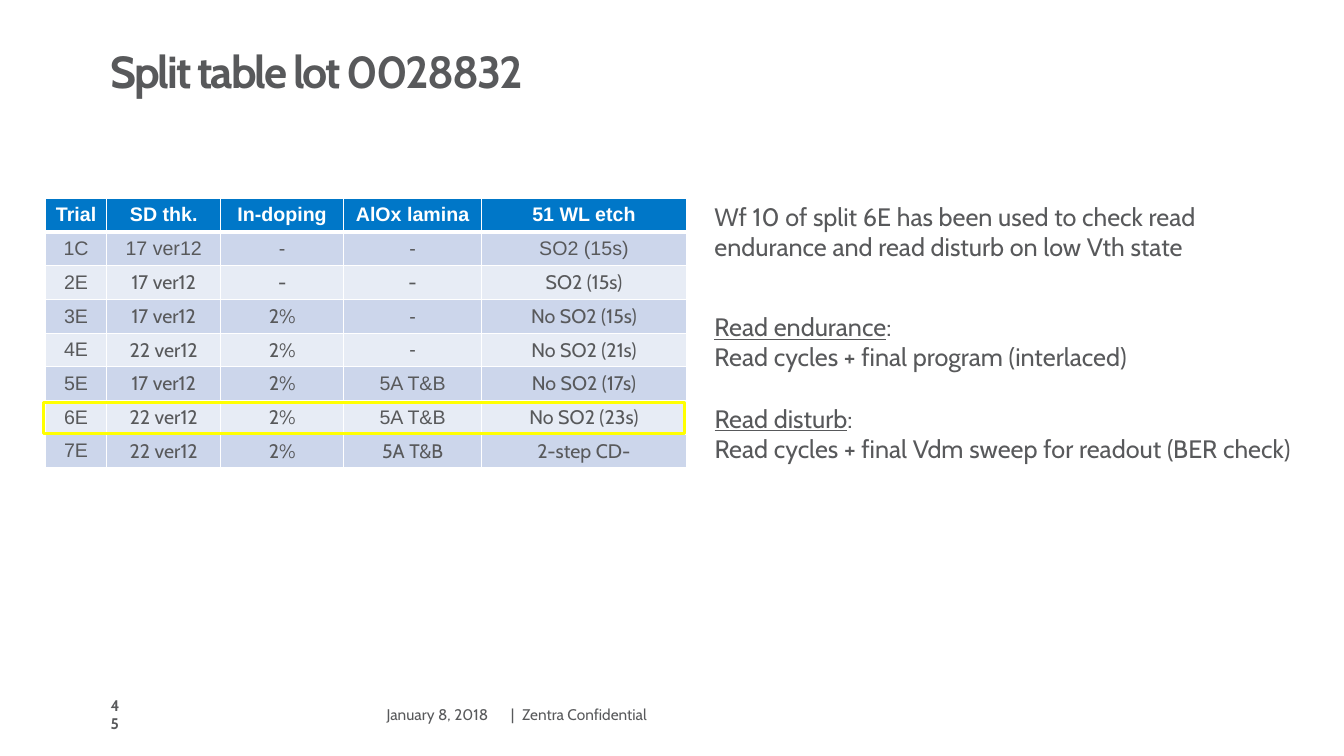
from dataclasses import dataclass

import lxml.etree
import pptx
import pptx.dml.color
import pptx.enum.shapes
import pptx.enum.text
import pptx.oxml.ns
import pptx.util

Pt = pptx.util.Pt
Align = pptx.enum.text.PP_ALIGN
Anchor = pptx.enum.text.MSO_ANCHOR
qn = pptx.oxml.ns.qn


@dataclass(frozen=True)
class Theme:
    ink: str = "58595B"
    white: str = "FFFFFF"
    header: str = "0077C8"
    bands: tuple[str, str] = ("CCD6EB", "E7ECF5")
    highlight: str = "FFFF00"
    body_font: str = "Cabin"
    table_font: str = "Arial"
    title_size: float = 32
    note_size: float = 18
    table_size: float = 14
    footer_size: float = 11


THEME = Theme()


@dataclass(frozen=True)
class Line:
    text: str
    underlined: str = ""  # leading words that carry an underline


@dataclass(frozen=True)
class Block:
    left: float
    top: float
    width: float
    height: float
    lines: tuple[Line, ...]
    size: float
    bold: bool = False
    wrap: bool = True
    inset: bool = True
    anchor: Anchor = Anchor.TOP
    align: Align = Align.LEFT
    tab: float = 0
    line_spacing: float = 1
    tracking: float = 0


@dataclass(frozen=True)
class Trial:
    values: tuple[str, ...]
    arial_columns: tuple[int, ...] = (0, 3)


TITLE = Block(72, 0, 817.2, 73.4, (Line("Split table lot 0028832"),), THEME.title_size,
              bold=True, anchor=Anchor.BOTTOM, line_spacing=0.9, tracking=-1.5)

FOOTER_TOP, FOOTER_HEIGHT = 501.1, 18
FOOTERS = (
    Block(72, FOOTER_TOP, 21.6, FOOTER_HEIGHT, (Line("45"),), THEME.footer_size,
          bold=True, anchor=Anchor.MIDDLE),
    Block(259.2, FOOTER_TOP, 106.6, FOOTER_HEIGHT, (Line("January 8, 2018"),),
          THEME.footer_size, inset=False, anchor=Anchor.MIDDLE, align=Align.CENTER),
    Block(365, FOOTER_TOP, 110.2, FOOTER_HEIGHT, (Line("|\tZentra Confidential"),),
          THEME.footer_size, inset=False, anchor=Anchor.MIDDLE, tab=8),
)

NOTES_LEFT, NOTE_HEIGHT = 503.3, 51
NOTES = (
    Block(NOTES_LEFT, 140.4, 422.6, NOTE_HEIGHT,
          (Line("Wf 10 of split 6E has been used to check read endurance "
                "and read disturb on low Vth state"),), THEME.note_size),
    Block(NOTES_LEFT, 218.9, 331.2, NOTE_HEIGHT,
          (Line(":", underlined="Read endurance"),
           Line("Read cycles + final program (interlaced)")), THEME.note_size, wrap=False),
    Block(NOTES_LEFT, 284.4, 461.5, NOTE_HEIGHT,
          (Line(":", underlined="Read disturb"),
           Line("Read cycles + final Vdm sweep for readout (BER check)")),
          THEME.note_size, wrap=False),
)

TABLE_LEFT, TABLE_TOP, ROW_HEIGHT = 32.4, 141.8, 24
COLUMN_WIDTHS = (43.9, 81.4, 87.8, 98.6, 146.2)
HEADINGS = ("Trial", "SD thk.", "In-doping", "AlOx lamina", "51 WL etch")
TRIALS = (
    Trial(("1C", "17 ver12", "-", "-", "SO2 (15s)"), (0, 1, 2, 3, 4)),
    Trial(("2E", "17 ver12", "-", "-", "SO2 (15s)"), (0,)),
    Trial(("3E", "17 ver12", "2%", "-", "No SO2 (15s)")),
    Trial(("4E", "22 ver12", "2%", "-", "No SO2 (21s)")),
    Trial(("5E", "17 ver12", "2%", "5A T&B", "No SO2 (17s)")),
    Trial(("6E", "22 ver12", "2%", "5A T&B", "No SO2 (23s)")),
    Trial(("7E", "22 ver12", "2%", "5A T&B", "2-step CD-"), (0,)),
)


def rgb(value: str) -> pptx.dml.color.RGBColor:
    return pptx.dml.color.RGBColor.from_string(value)


def style(paragraph, font: str, size: float, color: str, bold: bool) -> None:
    paragraph.font.name = font
    paragraph.font.size = Pt(size)
    paragraph.font.bold = bold
    paragraph.font.color.rgb = rgb(color)


def add_block(slide, block: Block) -> None:
    box = slide.shapes.add_textbox(Pt(block.left), Pt(block.top),
                                   Pt(block.width), Pt(block.height))
    frame = box.text_frame
    frame.word_wrap = block.wrap
    frame.vertical_anchor = block.anchor
    if not block.inset:
        frame.margin_left = frame.margin_right = Pt(0)
        frame.margin_top = frame.margin_bottom = Pt(0)
    for index, line in enumerate(block.lines):
        paragraph = frame.add_paragraph() if index else frame.paragraphs[0]
        paragraph.alignment = block.align
        paragraph.line_spacing = block.line_spacing
        if block.tab:
            stops = lxml.etree.SubElement(paragraph._p.get_or_add_pPr(), qn("a:tabLst"))
            lxml.etree.SubElement(stops, qn("a:tab"), pos=str(Pt(block.tab)), algn="l")
        style(paragraph, THEME.body_font, block.size, THEME.ink, block.bold)
        if line.underlined:
            lead = paragraph.add_run()
            lead.text = line.underlined
            lead.font.underline = True
        rest = paragraph.add_run()
        rest.text = line.text
        if block.tracking:
            rest._r.get_or_add_rPr().set("spc", str(int(block.tracking * 100)))


def set_borders(cell, top: float, bottom: float) -> None:
    properties = cell._tc.get_or_add_tcPr()
    sides = (("a:lnL", 1), ("a:lnR", 1), ("a:lnT", top), ("a:lnB", bottom))
    for position, (side, width) in enumerate(sides):
        edge = lxml.etree.Element(qn(side), w=str(Pt(width)))
        fill = lxml.etree.SubElement(edge, qn("a:solidFill"))
        lxml.etree.SubElement(fill, qn("a:srgbClr"), val=THEME.white)
        properties.insert(position, edge)


def fill_cell(cell, text: str, font: str, color: str, fill: str, bold: bool) -> None:
    cell.fill.solid()
    cell.fill.fore_color.rgb = rgb(fill)
    paragraph = cell.text_frame.paragraphs[0]
    paragraph.alignment = Align.CENTER
    style(paragraph, font, THEME.table_size, color, bold)
    paragraph.add_run().text = text


def add_split_table(slide) -> None:
    row_count = len(TRIALS) + 1
    split = slide.shapes.add_table(row_count, len(HEADINGS), Pt(TABLE_LEFT), Pt(TABLE_TOP),
                                   Pt(sum(COLUMN_WIDTHS)), Pt(ROW_HEIGHT * row_count)).table
    for column, width in zip(split.columns, COLUMN_WIDTHS):
        column.width = Pt(width)
    for row in split.rows:
        row.height = Pt(ROW_HEIGHT)
    for c, heading in enumerate(HEADINGS):
        cell = split.cell(0, c)
        fill_cell(cell, heading, THEME.table_font, THEME.white, THEME.header, True)
        set_borders(cell, top=1, bottom=3)
    for r, trial in enumerate(TRIALS, start=1):
        for c, value in enumerate(trial.values):
            cell = split.cell(r, c)
            font = THEME.table_font if c in trial.arial_columns else THEME.body_font
            fill_cell(cell, value, font, THEME.ink, THEME.bands[(r - 1) % 2], False)
            cell.vertical_anchor = Anchor.MIDDLE
            set_borders(cell, top=3 if r == 1 else 1, bottom=1)


def add_highlight(slide) -> None:
    frame = slide.shapes.add_shape(pptx.enum.shapes.MSO_SHAPE.RECTANGLE,
                                   Pt(31), Pt(287.3), Pt(457.9), Pt(22.3))
    frame.shadow.inherit = False
    frame.fill.background()
    frame.line.color.rgb = rgb(THEME.highlight)
    frame.line.width = Pt(2.25)


def main() -> None:
    deck = pptx.Presentation()
    deck.slide_width, deck.slide_height = Pt(960), Pt(540)
    slide = deck.slides.add_slide(deck.slide_layouts[6])
    # Title and footer
    for block in (TITLE, *FOOTERS):
        add_block(slide, block)
    # Split table with the tested trial framed
    add_split_table(slide)
    add_highlight(slide)
    # Test notes
    for block in NOTES:
        add_block(slide, block)
    deck.save("out.pptx")


if __name__ == "__main__":
    main()
